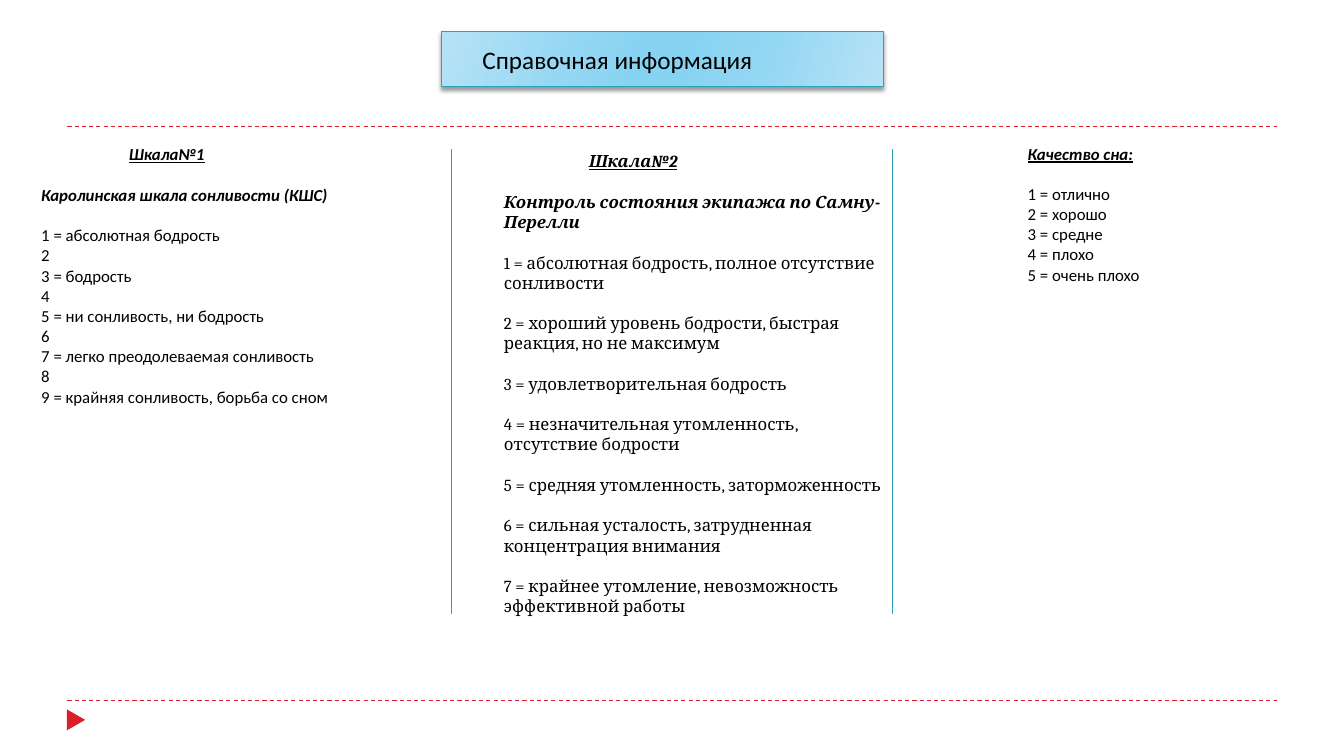
import lxml.etree
import pptx
import pptx.dml.color
import pptx.enum.dml
import pptx.enum.shapes
import pptx.enum.text
import pptx.oxml
import pptx.oxml.ns
import pptx.util

Cm = pptx.util.Cm
Pt = pptx.util.Pt
RGBColor = pptx.dml.color.RGBColor
Shapes = pptx.enum.shapes.MSO_SHAPE

RED = RGBColor(0xDA, 0x1F, 0x28)
TEAL = RGBColor(0x2D, 0xA2, 0xBF)
BLACK = RGBColor(0, 0, 0)
PALE = RGBColor(0xB6, 0xE2, 0xF5)
SKY = RGBColor(0x94, 0xD7, 0xF3)
BRIGHT = RGBColor(0x87, 0xD3, 0xF2)
BANNER_STOPS = [(0, PALE), (30, SKY), (45, BRIGHT), (55, BRIGHT), (73, SKY), (100, PALE)]

KAROLINSKA = [
    "1 = абсолютная бодрость",
    "2",
    "3 = бодрость",
    "4",
    "5 = ни сонливость, ни бодрость",
    "6",
    "7 = легко преодолеваемая сонливость",
    "8",
    "9 = крайняя сонливость, борьба со сном",
]
CREW = [
    "1 = абсолютная бодрость, полное отсутствие сонливости",
    "2 = хороший уровень бодрости, быстрая реакция, но не максимум",
    "3 = удовлетворительная бодрость",
    "4 = незначительная утомленность, отсутствие бодрости",
    "5 = средняя утомленность, заторможенность",
    "6 = сильная усталость, затрудненная концентрация внимания",
    "7 = крайнее утомление, невозможность эффективной работы",
]
SLEEP = ["1 = отлично", "2 = хорошо", "3 = средне", "4 = плохо", "5 = очень плохо"]


class ReferenceSlide:
    """Draws the elements of the reference slide in one shared style."""

    text_size = Pt(12)
    title_size = Pt(18)
    line_gap = Pt(14.5)
    line_width = Pt(0.75)

    def __init__(self, page):
        self.page = page

    def line(self, start, end, color, dashed=False):
        connector = self.page.shapes.add_connector(
            pptx.enum.shapes.MSO_CONNECTOR.STRAIGHT, *map(Cm, start + end)
        )
        connector.line.color.rgb = color
        connector.line.width = self.line_width
        if dashed:
            connector.line.dash_style = pptx.enum.dml.MSO_LINE.DASH
        properties = connector._element.spPr
        lxml.etree.SubElement(properties, pptx.oxml.ns.qn("a:effectLst"))

    def marker(self, bounds):
        triangle = self.page.shapes.add_shape(Shapes.ISOSCELES_TRIANGLE, *map(Cm, bounds))
        triangle.shadow.inherit = False
        triangle.rotation = 90
        triangle.fill.solid()
        triangle.fill.fore_color.rgb = RED
        triangle.line.fill.background()

    def banner(self, bounds):
        banner = self.page.shapes.add_shape(Shapes.RECTANGLE, *map(Cm, bounds))
        banner.shadow.inherit = False
        banner.line.color.rgb = TEAL
        banner.line.width = self.line_width
        banner.fill.gradient()
        banner.fill.gradient_angle = 344
        properties = banner._element.spPr
        stops = properties.find(".//" + pptx.oxml.ns.qn("a:gsLst"))
        stops.clear()
        for position, color in BANNER_STOPS:
            stops.append(pptx.oxml.parse_xml(
                f'<a:gs {pptx.oxml.ns.nsdecls("a")} pos="{position * 1000}">'
                f'<a:srgbClr val="{color}"/></a:gs>'
            ))
        effects = properties.find(pptx.oxml.ns.qn("a:effectLst"))
        effects.append(pptx.oxml.parse_xml(
            f'<a:outerShdw {pptx.oxml.ns.nsdecls("a")} blurRad="{Pt(3)}" dist="{Pt(2)}"'
            ' dir="5400000" rotWithShape="0"><a:srgbClr val="000000">'
            '<a:alpha val="40000"/></a:srgbClr></a:outerShdw>'
        ))

    def text(self, bounds, lines, font, size, margin_top=0.13):
        box = self.page.shapes.add_textbox(*map(Cm, bounds))
        frame = box.text_frame
        frame.word_wrap = True
        frame.vertical_anchor = pptx.enum.text.MSO_ANCHOR.TOP
        frame.margin_top = Cm(margin_top)
        frame.text = "\n".join(lines)
        for para in frame.paragraphs:
            for span in para.runs:
                span.font.name = font
                span.font.size = size
                span.font.color.rgb = BLACK
        return frame.paragraphs

    def scale(self, bounds, margin_top, heading, items, subtitle=None,
              font="Calibri", indent=0, spaced=False):
        titles = [heading, subtitle] if subtitle else [heading]
        paragraphs = self.text(bounds, titles + items, font, self.text_size, margin_top)
        for index, para in enumerate(paragraphs):
            if 0 < index <= len(titles) or (index and spaced):
                para.space_before = self.line_gap
            if index < len(titles):
                para.runs[0].font.bold = True
                para.runs[0].font.italic = True
        paragraphs[0].runs[0].font.underline = True
        paragraphs[0]._p.get_or_add_pPr().set("indent", str(Cm(indent)))


def main():
    deck = pptx.Presentation()
    deck.slide_width = Cm(33.87)
    deck.slide_height = Cm(19.05)
    slide = ReferenceSlide(deck.slides.add_slide(deck.slide_layouts[6]))

    for y in (17.65, 3.18):
        slide.line((1.7, y), (32.18, y), RED, dashed=True)
    slide.marker((1.65, 17.91, 0.53, 0.46))
    slide.banner((11.13, 0.79, 11.13, 1.4))
    slide.scale((0.79, 2.97, 12.7, 7.44), 0.66, "Шкала№1", KAROLINSKA,
                "Каролинская шкала сонливости (КШС)", indent=2.21)
    slide.scale((12.45, 3.63, 10.06, 12.57), 0.18, "Шкала№2", CREW,
                "Контроль состояния экипажа по Самну-Перелли",
                font="Cambria", indent=2.14, spaced=True)
    slide.text((11.91, 0.99, 14.55, 1.02), ["Справочная информация"],
               "Calibri", slide.title_size)
    slide.scale((25.65, 2.97, 7.14, 4.37), 0.64, "Качество сна:", SLEEP)
    for x in (11.38, 22.49):
        slide.line((x, 3.76), (x, 15.47), TEAL)

    deck.save("out.pptx")


if __name__ == "__main__":
    main()
